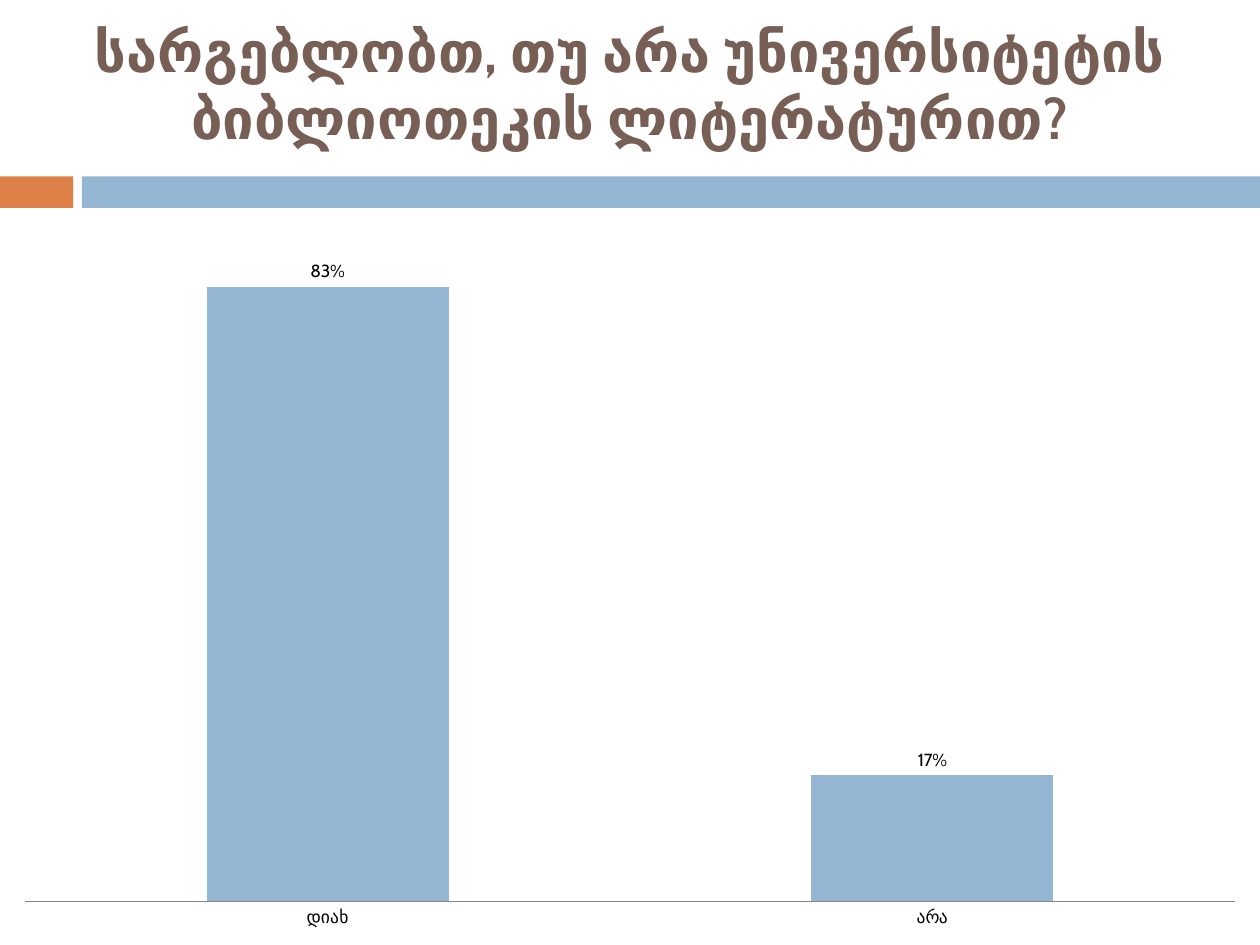
from dataclasses import dataclass

from lxml import etree
from pptx import Presentation
from pptx.chart.data import CategoryChartData
from pptx.dml.color import RGBColor
from pptx.enum.chart import XL_CHART_TYPE, XL_LABEL_POSITION, XL_TICK_MARK
from pptx.enum.shapes import MSO_SHAPE
from pptx.enum.text import MSO_ANCHOR, MSO_AUTO_SIZE, PP_ALIGN
from pptx.oxml import parse_xml
from pptx.util import Inches, Pt

COLUMNS = XL_CHART_TYPE.COLUMN_CLUSTERED
OUTSIDE = XL_LABEL_POSITION.OUTSIDE_END
NO_TICK = XL_TICK_MARK.NONE
RECT = MSO_SHAPE.RECTANGLE
MIDDLE = MSO_ANCHOR.MIDDLE
NO_FIT = MSO_AUTO_SIZE.NONE
CENTER = PP_ALIGN.CENTER
CHART_NS = "http://schemas.openxmlformats.org/drawingml/2006/chart"

WIDTH, HEIGHT = 10, 7.5
TITLE_HEIGHT = 1.33
BAND_TOP, BAND_HEIGHT = 1.4, 0.25
ACCENT_WIDTH, BAND_LEFT = 0.58, 0.65
CHART_TOP = 1.75


@dataclass(frozen=True)
class Theme:
    font: str = "Cabin"
    title: RGBColor = RGBColor(0x77, 0x5F, 0x55)
    blue: RGBColor = RGBColor(0x94, 0xB6, 0xD2)
    orange: RGBColor = RGBColor(0xDD, 0x80, 0x47)
    text: RGBColor = RGBColor(0, 0, 0)
    axis: RGBColor = RGBColor(0x86, 0x86, 0x86)
    title_size: int = 32
    chart_size: int = 10


THEME = Theme()


def format_font(font, size, color, bold=False):
    font.name = THEME.font
    font.size = Pt(size)
    font.color.rgb = color
    font.bold = bold


def write_text(tf, text, *, size, color, bold=False, align=CENTER, anchor=MIDDLE):
    tf.word_wrap = True
    tf.auto_size = NO_FIT
    tf.vertical_anchor = anchor
    p = tf.paragraphs[0]
    p.alignment = align
    r = p.add_run()
    r.text = text
    format_font(r.font, size, color, bold)


def add_title(s, text):
    sp = s.shapes.title
    sp.left = sp.top = 0
    sp.width, sp.height = Inches(WIDTH), Inches(TITLE_HEIGHT)
    write_text(sp.text_frame, text, size=THEME.title_size,
               color=THEME.title, bold=True)


def add_band(s, left, width, color):
    sp = s.shapes.add_shape(RECT, Inches(left), Inches(BAND_TOP),
                            Inches(width), Inches(BAND_HEIGHT))
    sp.shadow.inherit = False
    sp.fill.solid()
    sp.fill.fore_color.rgb = color
    sp.line.fill.background()


def set_plot_layout(chart, **shares):
    """Fix the inner plot area as shares (x, y, w, h) of the chart."""
    plot_area = chart.plots[0]._element.getparent()
    for old in plot_area.findall(f"{{{CHART_NS}}}layout"):
        plot_area.remove(old)
    layout = parse_xml(f'<c:layout xmlns:c="{CHART_NS}"><c:manualLayout/></c:layout>')
    settings = {"layoutTarget": "inner", "xMode": "edge", "yMode": "edge", **shares}
    for name, value in settings.items():
        etree.SubElement(layout[0], f"{{{CHART_NS}}}{name}", val=str(value))
    plot_area.insert(0, layout)


def add_column_chart(s, answers):
    data = CategoryChartData(number_format="0%")
    data.categories = list(answers)
    data.add_series("Series 1", list(answers.values()))
    chart = s.shapes.add_chart(COLUMNS, 0, Inches(CHART_TOP), Inches(WIDTH),
                               Inches(HEIGHT - CHART_TOP), data).chart
    chart.has_legend = chart.has_title = False
    format_font(chart.font, THEME.chart_size, THEME.text)

    plot = chart.plots[0]
    plot.vary_by_categories = False
    plot.gap_width = 150
    fill = plot.series[0].format.fill
    fill.solid()
    fill.fore_color.rgb = THEME.blue

    plot.has_data_labels = True
    labels = plot.data_labels
    labels.show_value = True
    labels.number_format = "0%"
    labels.number_format_is_linked = False
    labels.position = OUTSIDE
    format_font(labels.font, THEME.chart_size, THEME.text)

    axis = chart.category_axis
    axis.major_tick_mark = axis.minor_tick_mark = NO_TICK
    axis.format.line.color.rgb = THEME.axis
    axis.format.line.width = Pt(0.75)

    values = chart.value_axis
    values.minimum_scale, values.maximum_scale = 0, 0.9
    values.has_major_gridlines = False
    values.tick_labels.number_format = "0%"
    values.tick_labels.number_format_is_linked = False
    values.visible = False
    set_plot_layout(chart, x=0.02, y=0.02, w=0.96, h=0.92)


def main():
    prs = Presentation()
    prs.slide_width, prs.slide_height = Inches(WIDTH), Inches(HEIGHT)
    s = prs.slides.add_slide(prs.slide_layouts[5])
    add_band(s, 0, ACCENT_WIDTH, THEME.orange)
    add_band(s, BAND_LEFT, WIDTH - BAND_LEFT, THEME.blue)
    add_title(s, "სარგებლობთ, თუ არა უნივერსიტეტის ბიბლიოთეკის ლიტერატურით?")
    add_column_chart(s, {"დიახ": 0.83, "არა": 0.17})
    prs.save("out.pptx")


if __name__ == "__main__":
    main()
